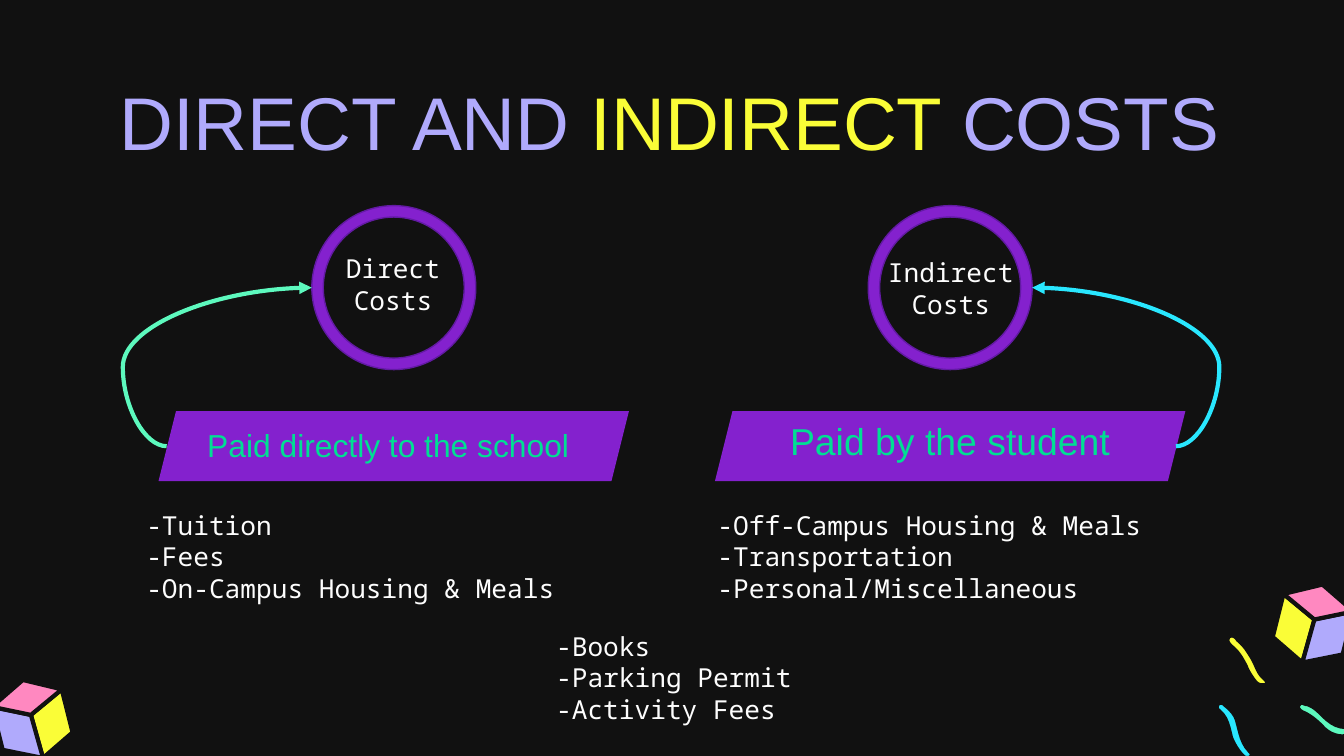
from lxml.etree import SubElement
from pptx import Presentation
from pptx.dml.color import RGBColor
from pptx.enum.shapes import MSO_CONNECTOR, MSO_SHAPE
from pptx.enum.text import MSO_ANCHOR, PP_ALIGN
from pptx.oxml.ns import qn
from pptx.util import Inches, Pt

# 16:9 slide on a grid of 100 columns by 56.25 rows
WIDTH = Inches(10)
HEIGHT = WIDTH * 9 // 16
COLS, ROWS = 100, 56.25
HALF = 41.4  # columns from the direct side to the indirect side
MONO, SANS = "Noto Sans Mono", "Arial"
COLORS = {
    "back": "111111", "white": "FDFDFD", "lilac": "B0AAFC", "yellow": "FAFD37",
    "pink": "FF88C0", "cyan": "29E7FF", "mint": "5DF9BE", "green": "00DF93",
    "purple": "8421CE", "edge": "621AA3",
}

# Squiggle outlines: a start point, then three points for each Bezier curve
SQUIGGLES = {
    "cyan": [
        (90.8, 52.3), (90.8, 52.3), (90.7, 52.3), (90.6, 52.4), (90.5, 52.6), (90.5, 52.8),
        (90.7, 52.9), (91.3, 53.4), (91.4, 54.1), (91.6, 54.9), (91.8, 55.4), (92.1, 55.9),
        (92.5, 56.3), (92.6, 56.4), (92.7, 56.4), (92.8, 56.4), (92.9, 56.4), (93, 56.4),
        (93.1, 56.3), (93.2, 56.1), (93.1, 56), (93, 55.9), (92.4, 55.3), (92.3, 54.5),
        (92.1, 53.8), (92, 53.2), (91.6, 52.8), (91.1, 52.4), (91.1, 52.3), (90.9, 52.3),
        (90.8, 52.3)],
    "mint": [
        (96.9, 52.3), (96.8, 52.3), (96.7, 52.3), (96.6, 52.5), (96.5, 52.7), (96.7, 52.9),
        (96.9, 53), (97.4, 53.2), (97.9, 53.6), (98.3, 54), (98.7, 54.5), (99.3, 54.8),
        (99.9, 54.8), (100, 54.8), (100.2, 54.7), (100.4, 54.7), (100.6, 54.7), (100.7, 54.6),
        (100.7, 54.4), (100.7, 54.2), (100.6, 54.1), (100.4, 54.1), (100.3, 54.1), (100.2, 54.1),
        (100.2, 54.1), (99.3, 54.1), (98.8, 53.6), (98.2, 53), (97.9, 52.7), (97.6, 52.5),
        (97.3, 52.4), (97.1, 52.4), (97, 52.3), (96.9, 52.3)],
    "yellow": [
        (91.7, 47.3), (91.6, 47.3), (91.5, 47.3), (91.4, 47.4), (91.2, 47.7), (91.4, 47.9),
        (91.6, 48.1), (92.1, 48.5), (92.4, 49), (92.7, 49.6), (92.8, 49.9), (93, 50.2),
        (93.2, 50.5), (93.4, 50.8), (93.6, 51), (93.9, 51), (94, 51), (94, 51),
        (94, 51), (94.1, 51), (94.2, 51), (94.3, 50.8), (94.3, 50.7), (94.2, 50.6),
        (94.1, 50.5), (93.6, 50.1), (93.5, 49.5), (93.2, 49), (92.9, 48.5), (92.6, 48),
        (92.1, 47.6), (92, 47.4), (91.8, 47.3), (91.7, 47.3)],
}

# Faces of the left cube
CUBE = {
    "yellow": [(4.6, 51.3), (5.4, 54.5), (3.2, 56.4), (2.3, 53.2)],
    "lilac": [(-0.6, 52.6), (2.3, 53.2), (3.2, 56.4), (0.2, 55.8)],
    "pink": [(1.7, 50.6), (4.6, 51.3), (2.3, 53.2), (-0.6, 52.6)],
}


def x(col):
    return round(WIDTH * col / COLS)


def y(row):
    return round(HEIGHT * row / ROWS)


def rgb(name):
    return RGBColor.from_string(COLORS[name])


def paint(sp, fill, line=None, width=0.75):
    sp.shadow.inherit = False
    sp.fill.solid()
    sp.fill.fore_color.rgb = rgb(fill)
    if line:
        sp.line.color.rgb = rgb(line)
        sp.line.width = Pt(width)
    else:
        sp.line.fill.background()


def add_outline(s, points, fill):
    points = [(x(c), y(r)) for c, r in points]
    builder = s.shapes.build_freeform(*points[0])
    builder.add_line_segments(points[1:], close=True)
    paint(builder.convert_to_shape(), fill, "back", 2.25)


def flatten(points, steps=6):
    """Turn a chain of cubic Bezier curves into a polyline."""
    result = [points[0]]
    for i in range(0, len(points) - 1, 3):
        for step in range(1, steps + 1):
            t = step / steps
            weights = ((1 - t) ** 3, 3 * t * (1 - t) ** 2, 3 * t * t * (1 - t), t ** 3)
            result.append(tuple(sum(w * p[axis] for w, p in zip(weights, points[i:i + 4]))
                                for axis in (0, 1)))
    return result


def add_preset(s, kind, col, row, cols, rows, adjust, line=None):
    sp = s.shapes.add_shape(kind, x(col), y(row), x(cols), y(rows))
    sp.adjustments[0] = adjust
    paint(sp, "purple", line)


def add_arrow(s, start, end, color):
    """Curved connector that bulges outward, with its arrowhead at the start."""
    line = s.shapes.add_connector(
        MSO_CONNECTOR.CURVE, x(start[0]), y(start[1]), x(end[0]), y(end[1]))
    line.line.color.rgb = rgb(color)
    line.line.width = Pt(2.25)
    sp_pr = line._element.spPr
    guides = sp_pr.find(qn("a:prstGeom")).find(qn("a:avLst"))
    SubElement(guides, qn("a:gd"), name="adj1", fmla="val 130200")
    SubElement(sp_pr.find(qn("a:ln")), qn("a:headEnd"), type="triangle")
    SubElement(sp_pr, qn("a:effectLst"))


def add_frame(s, col, row, cols, rows):
    tf = s.shapes.add_textbox(x(col), y(row), x(cols), y(rows)).text_frame
    tf.word_wrap = True
    tf.margin_left = tf.margin_right = tf.margin_top = tf.margin_bottom = Inches(0.1)
    return tf


def add_text(s, lines, col, row, cols, rows, size=14, font=MONO, color="white",
             align=PP_ALIGN.LEFT):
    tf = add_frame(s, col, row, cols, rows)
    for i, text in enumerate(lines):
        p = tf.paragraphs[0] if i == 0 else tf.add_paragraph()
        p.text = text
        p.alignment = align
        p.font.size, p.font.name = Pt(size), font
        p.font.color.rgb = rgb(color)


def add_title(s, parts):
    tf = add_frame(s, 7.9, 5.9, 84.3, 6.2)
    tf.vertical_anchor = MSO_ANCHOR.MIDDLE
    p = tf.paragraphs[0]
    p.font.size, p.font.name = Pt(40), SANS
    for text, color in parts:
        r = p.add_run()
        r.text = text
        r.font.color.rgb = rgb(color)


def main():
    prs = Presentation()
    prs.slide_width, prs.slide_height = WIDTH, HEIGHT
    s = prs.slides.add_slide(prs.slide_layouts[6])
    s.background.fill.solid()
    s.background.fill.fore_color.rgb = rgb("back")

    # Corner decorations; the right cube mirrors the left one
    for color, points in SQUIGGLES.items():
        add_outline(s, flatten(points), color)
    for color, points in CUBE.items():
        add_outline(s, points, color)
        add_outline(s, [(100.1 - c, r - 7.1) for c, r in points], color)

    add_title(s, [("DIRECT AND ", "lilac"), ("INDIRECT ", "yellow"), ("COSTS", "lilac")])

    # Banner and ring on each side
    for shift in (0, HALF):
        add_preset(s, MSO_SHAPE.PARALLELOGRAM, 11.8 + shift, 30.6, 35, 5.2, 0.25)
        add_preset(s, MSO_SHAPE.DONUT, 23.2 + shift, 15.3, 12.2, 12.2, 0.07, "edge")
    add_arrow(s, (23.2, 21.4), (12.4, 33.2), "mint")
    add_arrow(s, (76.8, 21.4), (87.5, 33.2), "cyan")

    # Banner and ring labels
    center = PP_ALIGN.CENTER
    add_text(s, ["Paid directly to the school"], 13, 30.7, 31.8, 6.2, 17, SANS, "green", center)
    add_text(s, ["Paid by the student"], 54.8, 30.1, 31.8, 6.2, 20, SANS, "green", center)
    add_text(s, ["Direct", "Costs"], 24.4, 17.8, 9.7, 7.2, align=center)
    add_text(s, ["Indirect", "Costs"], 64.9, 18.1, 11.7, 7.2, align=center)

    # Cost lists
    add_text(s, ["-Tuition", "-Fees", "-On-Campus Housing & Meals"], 9.9, 36.9, 33.9, 9.1)
    add_text(s, ["-Off-Campus Housing & Meals", "-Transportation", "-Personal/Miscellaneous"],
             52.4, 36.9, 36.7, 13.9)
    add_text(s, ["-Books", "-Parking Permit", "-Activity Fees"], 40.4, 45.9, 30.4, 9.1)

    prs.save("out.pptx")


if __name__ == "__main__":
    main()
